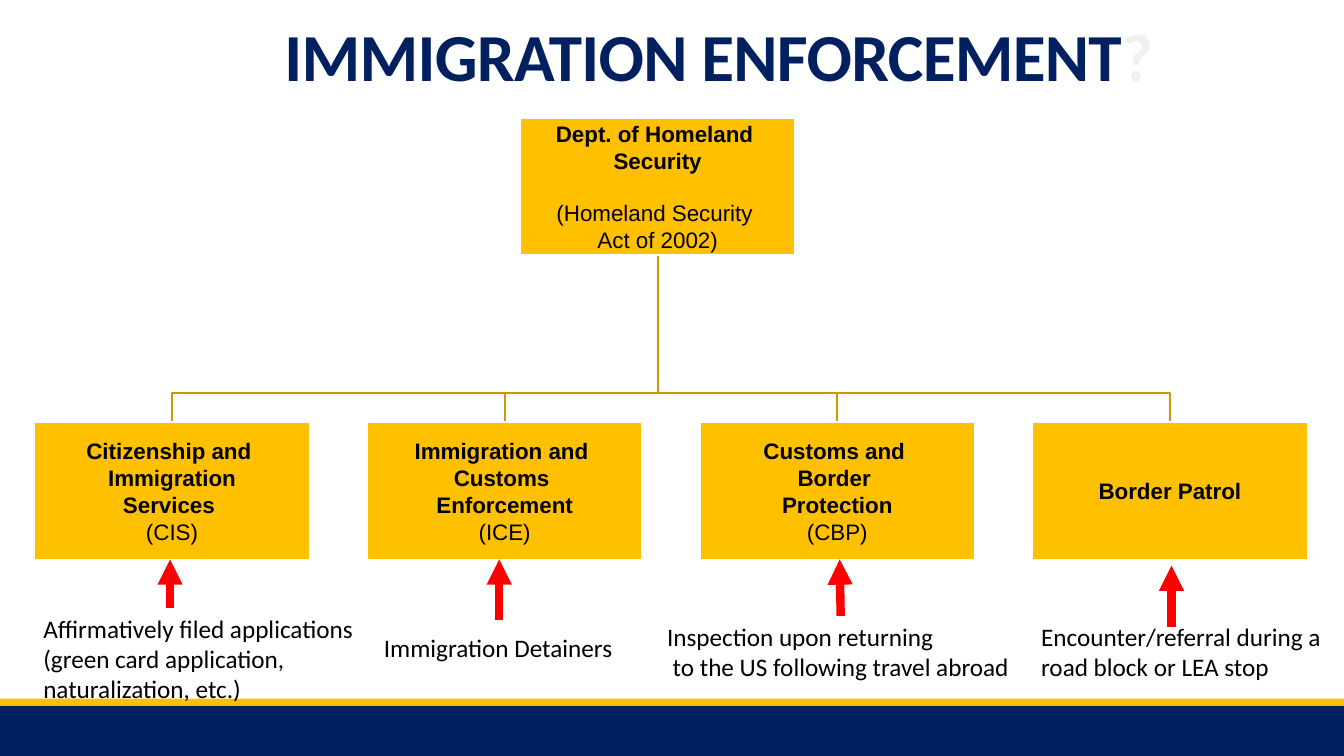
from lxml import etree
from pptx import Presentation
from pptx.dml.color import RGBColor
from pptx.enum.shapes import MSO_CONNECTOR, MSO_SHAPE
from pptx.enum.text import MSO_ANCHOR, MSO_AUTO_SIZE, PP_ALIGN
from pptx.oxml.ns import qn
from pptx.util import Pt

RECTANGLE = MSO_SHAPE.RECTANGLE
STRAIGHT = MSO_CONNECTOR.STRAIGHT
MIDDLE, BOTTOM = MSO_ANCHOR.MIDDLE, MSO_ANCHOR.BOTTOM
CENTER = PP_ALIGN.CENTER
NO_AUTOFIT, FIT_SHAPE = MSO_AUTO_SIZE.NONE, MSO_AUTO_SIZE.SHAPE_TO_FIT_TEXT

NAVY = RGBColor(0x00, 0x20, 0x60)
GOLD = RGBColor(0xFF, 0xC0, 0x00)
DARK_GOLD = RGBColor(0xCC, 0x9A, 0x00)
PALE_GRAY = RGBColor(0xF1, 0xF0, 0xF0)
RED = RGBColor(0xFF, 0x00, 0x00)
WHITE = RGBColor(0xFF, 0xFF, 0xFF)
BLACK = RGBColor(0x00, 0x00, 0x00)

SLIDE_WIDTH, SLIDE_HEIGHT = 960, 540
BOX_WIDTH, BOX_HEIGHT = 196.6, 98
ROOT_LEFT, ROOT_TOP = 371.5, 84.2
AGENCY_LEFT, AGENCY_TOP, AGENCY_STEP = 24.6, 301.6, 237.6
BRANCH_Y = 280.8
BLANK_LINE = 18.4

ROOT_NAME = ["Dept. of Homeland ", "Security"]
ROOT_DETAIL = ["(Homeland Security ", "Act of 2002)"]
AGENCIES = [
    (["Citizenship and ", "Immigration", "Services "], ["(CIS)"]),
    (["Immigration and ", "Customs ", "Enforcement"], ["(ICE)"]),
    (["Customs and ", "Border ", "Protection"], ["(CBP)"]),
    (["Border Patrol"], []),
]
# left, top, width, height, lines
CAPTIONS = [
    (23.8, 434.2, 243.4, 72.7,
     ["Affirmatively filed applications", "(green card application,", "naturalization, etc.)"]),
    (267.1, 447.8, 179.3, 29, ["Immigration Detainers"]),
    (469.4, 439.9, 261.4, 51, ["Inspection upon returning", " to the US following travel abroad"]),
    (736.6, 439.9, 221, 51, ["Encounter/referral during a", "road block or LEA stop"]),
]
# start x, start y, end x, end y
ARROWS = [
    (121.5, 434.2, 121.5, 399.6),
    (356.6, 442.8, 356.6, 399.6),
    (600.5, 439.9, 599.8, 399.6),
    (836.8, 447.8, 836.8, 404),
]


def add_rectangle(slide, left, top, width, height, color):
    shape = slide.shapes.add_shape(RECTANGLE, Pt(left), Pt(top), Pt(width), Pt(height))
    shape.shadow.inherit = False
    shape.fill.solid()
    shape.fill.fore_color.rgb = color
    shape.line.fill.background()
    return shape


def add_paragraphs(text_frame, lines):
    """Write one paragraph per line, starting with the frame's first one."""
    paragraphs = []
    for index, line in enumerate(lines):
        paragraph = text_frame.add_paragraph() if index else text_frame.paragraphs[0]
        paragraph.text = line
        paragraphs.append(paragraph)
    return paragraphs


def format_font(font, name, size, color, bold=False):
    font.name = name
    font.size = Pt(size)
    font.color.rgb = color
    font.bold = bold


def add_title(slide):
    title = slide.shapes.title
    title.left, title.top, title.width, title.height = Pt(189.4), Pt(3.6), Pt(648), Pt(67.7)
    text_frame = title.text_frame
    text_frame.auto_size = NO_AUTOFIT
    text_frame.vertical_anchor = BOTTOM
    paragraph = text_frame.paragraphs[0]
    paragraph.alignment = CENTER
    paragraph.line_spacing = 0.85
    for text, color in [("IMMIGRATION ENFORCEMENT", NAVY), ("?", PALE_GRAY)]:
        run = paragraph.add_run()
        run.text = text
        format_font(run.font, "Calibri", 48, color, bold=True)
        run._r.get_or_add_rPr().set("spc", "-50")


def add_box(slide, left, top, name, detail, detail_gap=0):
    box = add_rectangle(slide, left, top, BOX_WIDTH, BOX_HEIGHT, GOLD)
    box.line.color.rgb = WHITE
    box.line.width = Pt(1.25)
    text_frame = box.text_frame
    text_frame.word_wrap = True
    text_frame.vertical_anchor = MIDDLE
    text_frame.margin_left = text_frame.margin_right = Pt(0.7)
    text_frame.margin_top = text_frame.margin_bottom = Pt(0.7)
    for index, paragraph in enumerate(add_paragraphs(text_frame, name + detail)):
        paragraph.alignment = CENTER
        format_font(paragraph.font, "Arial", 16, BLACK, bold=index < len(name))
        if index == len(name):
            paragraph.space_before = Pt(detail_gap)


def add_branch(slide, agency_center):
    """Draw the bent line from the root box down to one agency."""
    root_center = ROOT_LEFT + BOX_WIDTH / 2
    builder = slide.shapes.build_freeform(Pt(root_center), Pt(ROOT_TOP + BOX_HEIGHT))
    corners = [(root_center, BRANCH_Y), (agency_center, BRANCH_Y), (agency_center, AGENCY_TOP)]
    builder.add_line_segments([(Pt(x), Pt(y)) for x, y in corners], close=False)
    branch = builder.convert_to_shape()
    branch.shadow.inherit = False
    branch.fill.background()
    branch.line.color.rgb = DARK_GOLD
    branch.line.width = Pt(1.25)


def add_caption(slide, left, top, width, height, lines):
    caption = slide.shapes.add_textbox(Pt(left), Pt(top), Pt(width), Pt(height))
    text_frame = caption.text_frame
    text_frame.word_wrap = False
    text_frame.auto_size = FIT_SHAPE
    for paragraph in add_paragraphs(text_frame, lines):
        format_font(paragraph.font, "Calibri", 18, BLACK)


def add_arrow(slide, start_x, start_y, end_x, end_y):
    arrow = slide.shapes.add_connector(STRAIGHT, Pt(start_x), Pt(start_y), Pt(end_x), Pt(end_y))
    arrow.line.color.rgb = RED
    arrow.line.width = Pt(6)
    etree.SubElement(arrow.line._get_or_add_ln(), qn("a:tailEnd"), type="triangle")
    etree.SubElement(arrow._element.spPr, qn("a:effectLst"))


def main():
    presentation = Presentation()
    presentation.slide_width, presentation.slide_height = Pt(SLIDE_WIDTH), Pt(SLIDE_HEIGHT)
    slide = presentation.slides.add_slide(presentation.slide_layouts[5])

    add_rectangle(slide, 0, 504, SLIDE_WIDTH, 36, NAVY)
    add_rectangle(slide, 0, 499, SLIDE_WIDTH, 5, GOLD)
    add_title(slide)

    agency_lefts = [AGENCY_LEFT + index * AGENCY_STEP for index in range(len(AGENCIES))]
    for left in agency_lefts:
        add_branch(slide, left + BOX_WIDTH / 2)
    add_box(slide, ROOT_LEFT, ROOT_TOP, ROOT_NAME, ROOT_DETAIL, BLANK_LINE)
    for left, (name, detail) in zip(agency_lefts, AGENCIES):
        add_box(slide, left, AGENCY_TOP, name, detail)

    for caption in CAPTIONS:
        add_caption(slide, *caption)
    for arrow in ARROWS:
        add_arrow(slide, *arrow)

    presentation.save("out.pptx")


if __name__ == "__main__":
    main()
